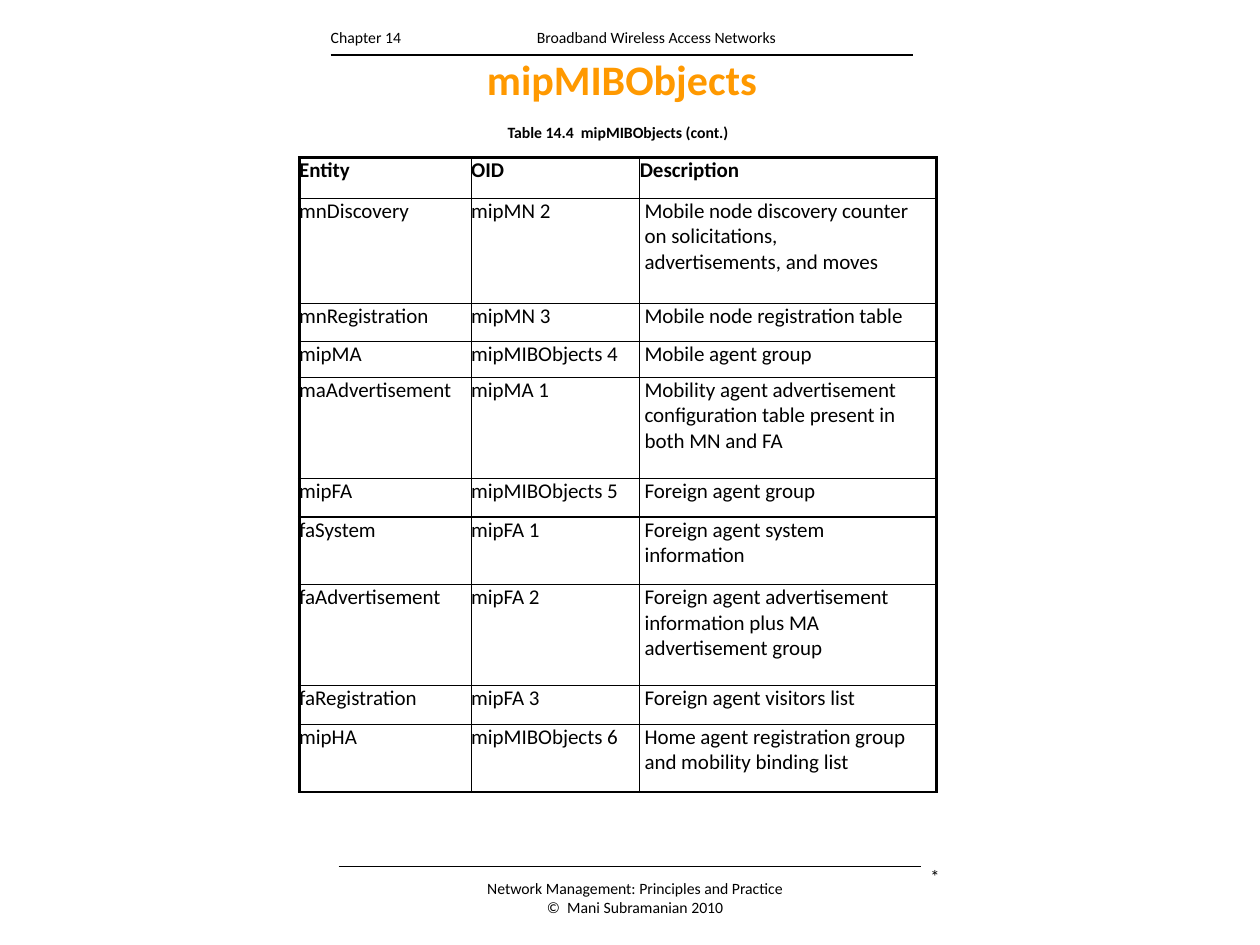
from lxml.etree import SubElement
from pptx import Presentation
from pptx.dml.color import RGBColor
from pptx.enum.shapes import MSO_CONNECTOR
from pptx.enum.text import MSO_ANCHOR, MSO_AUTO_SIZE, PP_ALIGN
from pptx.oxml.ns import qn
from pptx.util import Pt

BLACK, WHITE, ORANGE = "000000", "FFFFFF", "FF9900"
THIN, THICK = 1, 2.25
DESCRIPTION_INDENT = 3.6
COLUMN_WIDTHS = [131, 128.5, 226]

# Row height, then entity, OID and description; \v is a line break
ROWS = [
    (31, "Entity", "OID", "Description"),
    (80, "mnDiscovery", "mipMN 2",
     "Mobile node discovery counter\von solicitations,\vadvertisements, and moves"),
    (29.5, "mnRegistration", "mipMN 3", "Mobile node registration table"),
    (27, "mipMA", "mipMIBObjects 4", "Mobile agent group"),
    (77, "maAdvertisement", "mipMA 1",
     "Mobility agent advertisement\vconfiguration table present in\vboth MN and FA"),
    (29.5, "mipFA", "mipMIBObjects 5", "Foreign agent group"),
    (51.5, "faSystem", "mipFA 1", "Foreign agent system\vinformation"),
    (77, "faAdvertisement", "mipFA 2",
     "Foreign agent advertisement\vinformation plus MA\vadvertisement group"),
    (29.5, "faRegistration", "mipFA 3", "Foreign agent visitors list"),
    (51.5, "mipHA", "mipMIBObjects 6",
     "Home agent registration group\vand mobility binding list"),
]


def rgb(hex_color):
    return RGBColor.from_string(hex_color)


def write(frame, text, size=12, color=BLACK, bold=False, align=PP_ALIGN.LEFT):
    """Fill a text frame, one paragraph for each line of text."""
    frame.text = text
    for paragraph in frame.paragraphs:
        paragraph.alignment = align
        font = paragraph.font
        font.name, font.size, font.bold = "Calibri", Pt(size), bold
        font.color.rgb = rgb(color)
        for run in paragraph.runs:
            run.font.name, run.font.size, run.font.bold = "Calibri", Pt(size), bold
            run.font.color.rgb = rgb(color)


def place(shape, left, top, width, height):
    shape.left, shape.top = Pt(left), Pt(top)
    shape.width, shape.height = Pt(width), Pt(height)


def add_title(slide, text):
    title = slide.shapes.title
    place(title, 252, 42, 444, 36)
    frame = title.text_frame
    frame.auto_size = MSO_AUTO_SIZE.NONE
    frame.vertical_anchor = MSO_ANCHOR.MIDDLE
    write(frame, text, size=32, color=ORANGE, bold=True, align=PP_ALIGN.CENTER)


def add_text(slide, text, left, top, width, height, **text_format):
    box = slide.shapes.add_textbox(Pt(left), Pt(top), Pt(width), Pt(height))
    box.text_frame.word_wrap = True
    write(box.text_frame, text, **text_format)
    return box.text_frame


def add_tab_stop(paragraph, position):
    tabs = SubElement(paragraph._p.get_or_add_pPr(), qn("a:tabLst"))
    SubElement(tabs, qn("a:tab"), pos=str(Pt(position)), algn="l")


def add_rule(slide, left, top, width):
    rule = slide.shapes.add_connector(
        MSO_CONNECTOR.STRAIGHT, Pt(left), Pt(top), Pt(left + width), Pt(top))
    rule.line.color.rgb = rgb(BLACK)
    rule.line.width = Pt(THIN)
    SubElement(rule._element.spPr, qn("a:effectLst"))


def set_borders(cell, **widths):
    properties = cell._tc.get_or_add_tcPr()
    for side in "LRTB":
        line = SubElement(properties, qn(f"a:ln{side}"), w=str(Pt(widths[side])))
        fill = SubElement(line, qn("a:solidFill"))
        SubElement(fill, qn("a:srgbClr"), val=BLACK)


def add_object_table(slide, left, top):
    heights = [row[0] for row in ROWS]
    table = slide.shapes.add_table(
        len(ROWS), len(COLUMN_WIDTHS), Pt(left), Pt(top),
        Pt(sum(COLUMN_WIDTHS)), Pt(sum(heights))).table
    table.first_row = table.horz_banding = False
    last_row, last_column = len(ROWS) - 1, len(COLUMN_WIDTHS) - 1

    for column, width in zip(table.columns, COLUMN_WIDTHS):
        column.width = Pt(width)
    for r, (height, *entries) in enumerate(ROWS):
        table.rows[r].height = Pt(height)
        for c, entry in enumerate(entries):
            cell = table.cell(r, c)
            write(cell.text_frame, entry, size=16, bold=r == 0)
            indented = r > 0 and c == last_column
            cell.margin_left = Pt(DESCRIPTION_INDENT if indented else 0)
            cell.margin_right = cell.margin_top = cell.margin_bottom = 0
            # Thick outer frame, thin inner grid
            set_borders(cell,
                        L=THICK if c == 0 else THIN,
                        R=THICK if c == last_column else THIN,
                        T=THICK if r == 0 else THIN,
                        B=THICK if r == last_row else THIN)
            cell.fill.solid()
            cell.fill.fore_color.rgb = rgb(WHITE)


def main():
    presentation = Presentation()
    presentation.slide_width, presentation.slide_height = Pt(960), Pt(720)
    slide = presentation.slides.add_slide(presentation.slide_layouts[5])

    # Title and table
    add_title(slide, "mipMIBObjects")
    add_object_table(slide, 228, 120)

    # Page header: chapter, then its name at a tab stop
    add_rule(slide, 252, 42, 444)
    header = add_text(slide, "Chapter 14\tBroadband Wireless Access Networks",
                      234, 18, 464, 21.6)
    header.margin_left = Pt(18)
    add_tab_stop(header.paragraphs[0], 157)

    # Page footer
    add_rule(slide, 258, 660, 444)
    add_text(slide, "Network Management: Principles and Practice\n"
             "©  Mani Subramanian 2010", 354, 666, 260, 36, align=PP_ALIGN.CENTER)
    add_text(slide, "*", 597, 656, 126, 50, size=14, align=PP_ALIGN.RIGHT)

    # Table caption
    add_text(slide, "Table 14.4  mipMIBObjects (cont.)", 228, 90, 486, 21.6,
             bold=True, align=PP_ALIGN.CENTER)

    presentation.save("out.pptx")


if __name__ == "__main__":
    main()
